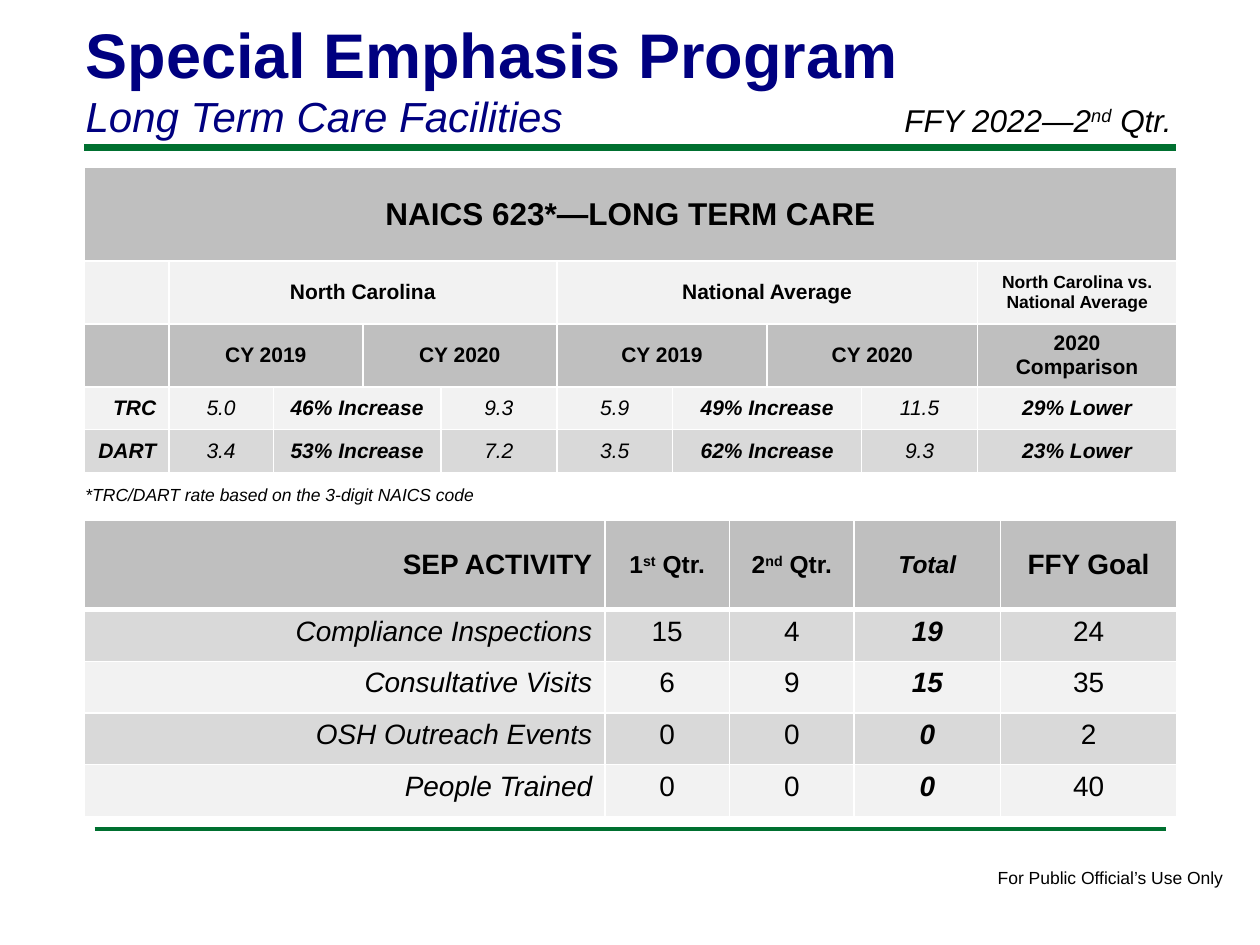
from lxml import etree
from pptx import Presentation
from pptx.dml.color import RGBColor
from pptx.enum.shapes import MSO_CONNECTOR
from pptx.enum.text import MSO_ANCHOR, MSO_AUTO_SIZE, PP_ALIGN
from pptx.oxml.ns import qn
from pptx.util import Inches, Pt

LEFT, CENTER, RIGHT = PP_ALIGN.LEFT, PP_ALIGN.CENTER, PP_ALIGN.RIGHT
TOP, MIDDLE, BOTTOM = MSO_ANCHOR.TOP, MSO_ANCHOR.MIDDLE, MSO_ANCHOR.BOTTOM
STRAIGHT = MSO_CONNECTOR.STRAIGHT
NO_AUTOFIT = MSO_AUTO_SIZE.NONE
FONT = "Arial"
COLORS = {"navy": "000080", "green": "007030", "black": "000000", "white": "FFFFFF",
          "head": "BFBFBF", "dark": "D9D9D9", "light": "F2F2F2"}


class SlideBuilder:
    def __init__(self, prs):
        self.slide = prs.slides.add_slide(prs.slide_layouts[5])

    def color(self, name):
        return RGBColor.from_string(COLORS[name])

    def fill_paragraph(self, p, text, size, bold=False, italic=False, align=LEFT,
                       color="black"):
        """Fill a paragraph; text between carets is superscript."""
        for i, part in enumerate(text.split("^")):
            r = p.add_run()
            r.text = part
            if i % 2:
                r._r.get_or_add_rPr().set("baseline", "30000")
        p.alignment = align
        font = p.font
        font.name, font.size, font.bold, font.italic = FONT, Pt(size), bold, italic
        font.color.rgb = self.color(color)

    def title(self, box, heading, subheading):
        sp = self.slide.shapes.title
        sp.left, sp.top, sp.width, sp.height = map(Inches, box)
        tf = sp.text_frame
        tf.auto_size = NO_AUTOFIT
        tf.vertical_anchor = BOTTOM
        self.fill_paragraph(tf.paragraphs[0], heading, 36, bold=True, color="navy")
        self.fill_paragraph(tf.add_paragraph(), subheading, 24, italic=True, color="navy")

    def text(self, box, text, size, italic=False, wrap=False):
        tf = self.slide.shapes.add_textbox(*map(Inches, box)).text_frame
        tf.word_wrap = wrap
        self.fill_paragraph(tf.paragraphs[0], text, size, italic=italic)

    def rule(self, x1, x2, y, width):
        line = self.slide.shapes.add_connector(STRAIGHT, *map(Inches, (x1, y, x2, y)))
        line.line.color.rgb = self.color("green")
        line.line.width = Pt(width)
        etree.SubElement(line._element.spPr, qn("a:effectLst"))

    def table(self, left, top, cols, rows, fills, header_line=1):
        size = map(Inches, (left, top, sum(cols), sum(rows)))
        table = self.slide.shapes.add_table(len(rows), len(cols), *size).table
        for column, width in zip(table.columns, cols):
            column.width = Inches(width)
        for i, (row, height) in enumerate(zip(table.rows, rows)):
            row.height = Inches(height)
            for cell in row.cells:
                cell.fill.solid()
                cell.fill.fore_color.rgb = self.color(fills[i])
                self.borders(cell, top=header_line if i == 1 else 1,
                             bottom=header_line if i == 0 else 1)
        return table

    def borders(self, cell, top, bottom):
        tcPr = cell._tc.get_or_add_tcPr()
        widths = {"a:lnL": 1, "a:lnR": 1, "a:lnT": top, "a:lnB": bottom}
        for i, (tag, width) in enumerate(widths.items()):
            ln = etree.Element(qn(tag), w=str(Pt(width)))
            fill = etree.SubElement(ln, qn("a:solidFill"))
            etree.SubElement(fill, qn("a:srgbClr"), val=COLORS["white"])
            tcPr.insert(i, ln)

    def cell(self, table, row, col, text, size, span=1, anchor=MIDDLE, align=CENTER, **style):
        cell = table.cell(row, col)
        if span > 1:
            cell.merge(table.cell(row, col + span - 1))
        cell.vertical_anchor = anchor
        self.fill_paragraph(cell.text_frame.paragraphs[0], text, size, align=align, **style)


def add_rates(b):
    cols = [0.67, 0.83, 0.71, 0.62, 0.92, 0.92, 0.75, 0.75, 0.92, 1.58]
    table = b.table(0.67, 1.33, cols, [0.74, 0.5, 0.5, 0.34, 0.34],
                    ["head", "light", "head", "light", "dark"])
    # Headings: row, column, text, size, columns spanned
    headings = [(0, 0, "NAICS 623*—LONG TERM CARE", 18, 10),
                (1, 1, "North Carolina", 12, 4),
                (1, 5, "National Average", 12, 4),
                (1, 9, "North Carolina vs. National Average", 10, 1),
                (2, 9, "2020 Comparison", 12, 1)]
    headings += [(2, col, year, 12, 2) for col, year in
                 zip((1, 3, 5, 7), ("CY 2019", "CY 2020") * 2)]
    for heading in headings:
        b.cell(table, *heading, bold=True)

    # Rates
    rates = [("TRC", "5.0", "46% Increase", "9.3", "5.9", "49% Increase", "11.5", "29% Lower"),
             ("DART", "3.4", "53% Increase", "7.2", "3.5", "62% Increase", "9.3", "23% Lower")]
    for row, values in enumerate(rates, 3):
        for col, text in zip((0, 1, 2, 4, 5, 6, 8, 9), values):
            b.cell(table, row, col, text, 12, span=2 if col in (2, 6) else 1,
                   align=CENTER if col else RIGHT, italic=True, bold=col in (0, 2, 6, 9))


def add_activity(b):
    table = b.table(0.67, 4.13, [4.13, 0.99, 0.99, 1.16, 1.4], [0.71] + [0.41] * 4,
                    ["head"] + ["dark", "light"] * 2, header_line=3)
    headings = ["SEP ACTIVITY", "1^st^ Qtr.", "2^nd^ Qtr.", "Total", "FFY Goal"]
    for col, text in enumerate(headings):
        b.cell(table, 0, col, text, 16 if col in (0, 4) else 14, bold=True,
               italic=col == 3, align=CENTER if col else RIGHT)
    activity = [("Compliance Inspections", 15, 4, 19, 24),
                ("Consultative Visits", 6, 9, 15, 35),
                ("OSH Outreach Events", 0, 0, 0, 2),
                ("People Trained", 0, 0, 0, 40)]
    for row, values in enumerate(activity, 1):
        for col, value in enumerate(values):
            b.cell(table, row, col, str(value), 16, anchor=TOP, bold=col == 3,
                   italic=col in (0, 3), align=CENTER if col else RIGHT)


def main():
    prs = Presentation()
    prs.slide_width, prs.slide_height = Inches(10), Inches(7.5)
    b = SlideBuilder(prs)

    # Rules and footer
    b.rule(0.67, 9.33, 1.17, 4)
    b.rule(0.75, 9.25, 6.58, 2)
    b.text((7.82, 6.83, 2.01, 0.27), "For Public Official’s Use Only", 10)

    # Title and period
    b.title((0.58, 0.06, 8.25, 1.11), "Special Emphasis Program", "Long Term Care Facilities")
    b.text((7.08, 0.75, 2.5, 0.4), "FFY 2022—2^nd^ Qtr.", 18, italic=True, wrap=True)

    # Tables and footnote
    add_activity(b)
    add_rates(b)
    b.text((0.58, 3.79, 3.38, 0.27), "*TRC/DART rate based on the 3-digit NAICS code", 10,
           italic=True)
    prs.save("out.pptx")


if __name__ == "__main__":
    main()
